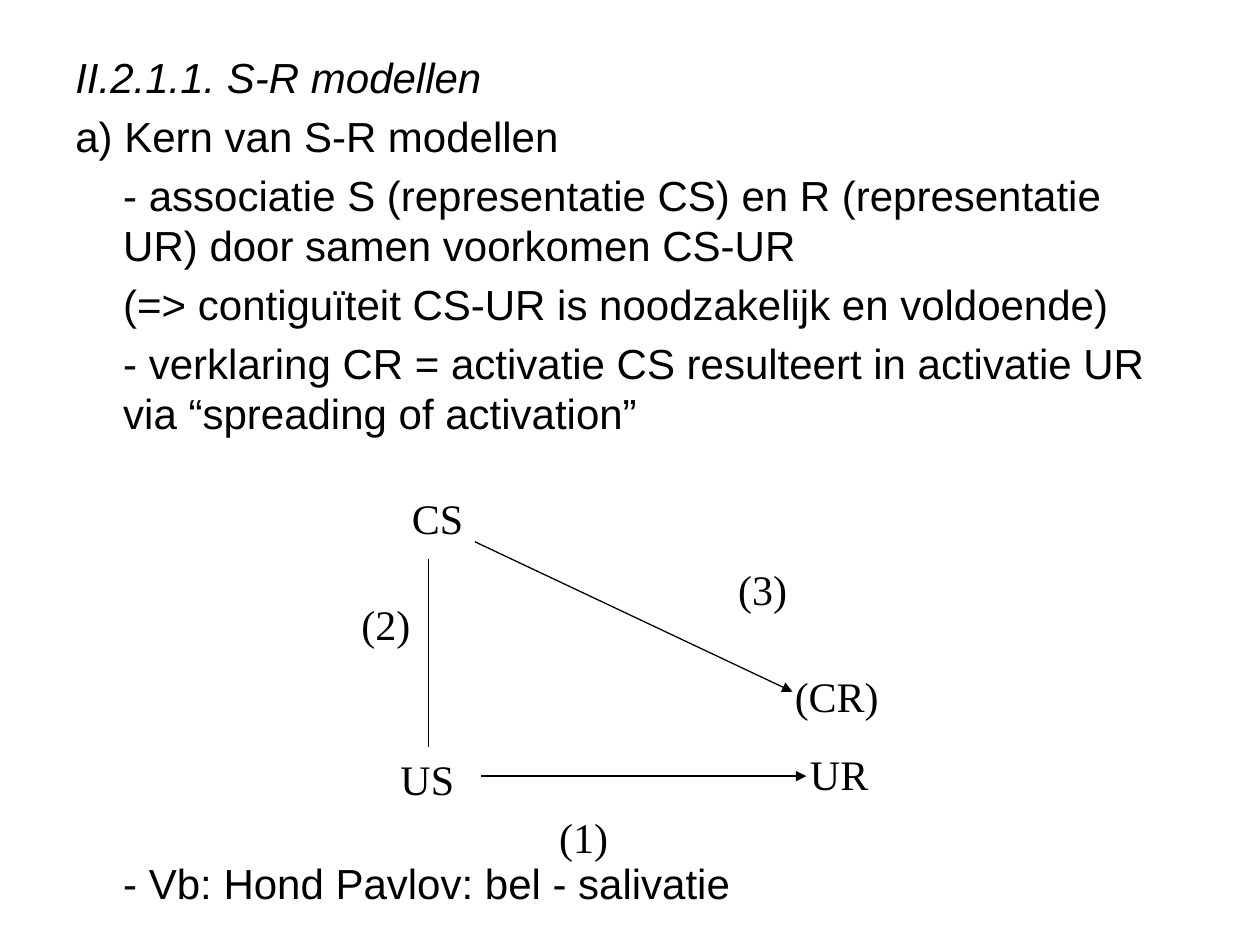
from lxml.etree import SubElement
from pptx import Presentation
from pptx.dml.color import RGBColor
from pptx.enum.shapes import MSO_CONNECTOR
from pptx.oxml.ns import qn
from pptx.util import Inches, Pt

COLORS = {"ink": "000000", "background": "FFFFFF"}
INK = RGBColor.from_string(COLORS["ink"])


def add_text_box(slide, left, top, width, height):
    shape = slide.shapes.add_textbox(Inches(left), Inches(top), Inches(width), Inches(height))
    shape.text_frame.word_wrap = True
    return shape.text_frame


def add_run(paragraph, text, font_name, italic=False):
    run = paragraph.add_run()
    run.text = text
    run.font.name = font_name
    run.font.size = Pt(24)
    run.font.italic = italic
    run.font.color.rgb = INK


presentation = Presentation()
presentation.slide_width = Inches(10)
presentation.slide_height = Inches(7.5)
slide = presentation.slides.add_slide(presentation.slide_layouts[6])
slide.background.fill.solid()
slide.background.fill.fore_color.rgb = RGBColor.from_string(COLORS["background"])

body_lines = [
    ("II.2.1.1. S-R modellen", 0, 0, True),
    ("a) Kern van S-R modellen", 0, 4.8, False),
    ("- associatie S (representatie CS) en R (representatie UR) door samen voorkomen CS-UR", 0.38, 4.8, False),
    ("(=> contiguïteit CS-UR is noodzakelijk en voldoende)", 0.38, 4.8, False),
    ("- verklaring CR = activatie CS resulteert in activatie UR via “spreading of activation”", 0.38, 4.8, False),
    ("- Vb: Hond Pavlov: bel - salivatie", 0.38, 240, False),
]
body = add_text_box(slide, 0.5, 0.36, 9, 6.34)
for index, (text, margin, space_before, italic) in enumerate(body_lines):
    paragraph = body.add_paragraph() if index else body.paragraphs[0]
    paragraph.space_before = Pt(space_before)
    properties = paragraph._p.get_or_add_pPr()
    properties.set("marL", str(Inches(margin)))
    properties.set("indent", "0")
    add_run(paragraph, text, "Arial", italic)

diagram_labels = [
    ("CS", 3.17, 3.86),
    ("US", 3.08, 5.93),
    ("UR", 6.33, 5.89),
    ("(CR)", 6.21, 5.27),
    ("(2)", 2.77, 4.7),
    ("(3)", 5.76, 4.42),
    ("(1)", 4.34, 6.39),
]
for text, left, top in diagram_labels:
    label = add_text_box(slide, left, top, 1.14, 0.85)
    add_run(label.paragraphs[0], text, "Times New Roman")

diagram_lines = [
    (3.77, 4.3, 6.29, 5.49, True),
    (3.4, 4.44, 3.4, 5.93, False),
    (3.82, 6.16, 6.4, 6.16, True),
]
for start_x, start_y, end_x, end_y, has_arrow in diagram_lines:
    connector = slide.shapes.add_connector(
        MSO_CONNECTOR.STRAIGHT, Inches(start_x), Inches(start_y), Inches(end_x), Inches(end_y)
    )
    connector.line.color.rgb = INK
    connector.line.width = Pt(0.75)
    if has_arrow:
        SubElement(connector.line._get_or_add_ln(), qn("a:tailEnd"), type="triangle")
    SubElement(connector._element.spPr, qn("a:effectLst"))

presentation.save("out.pptx")
